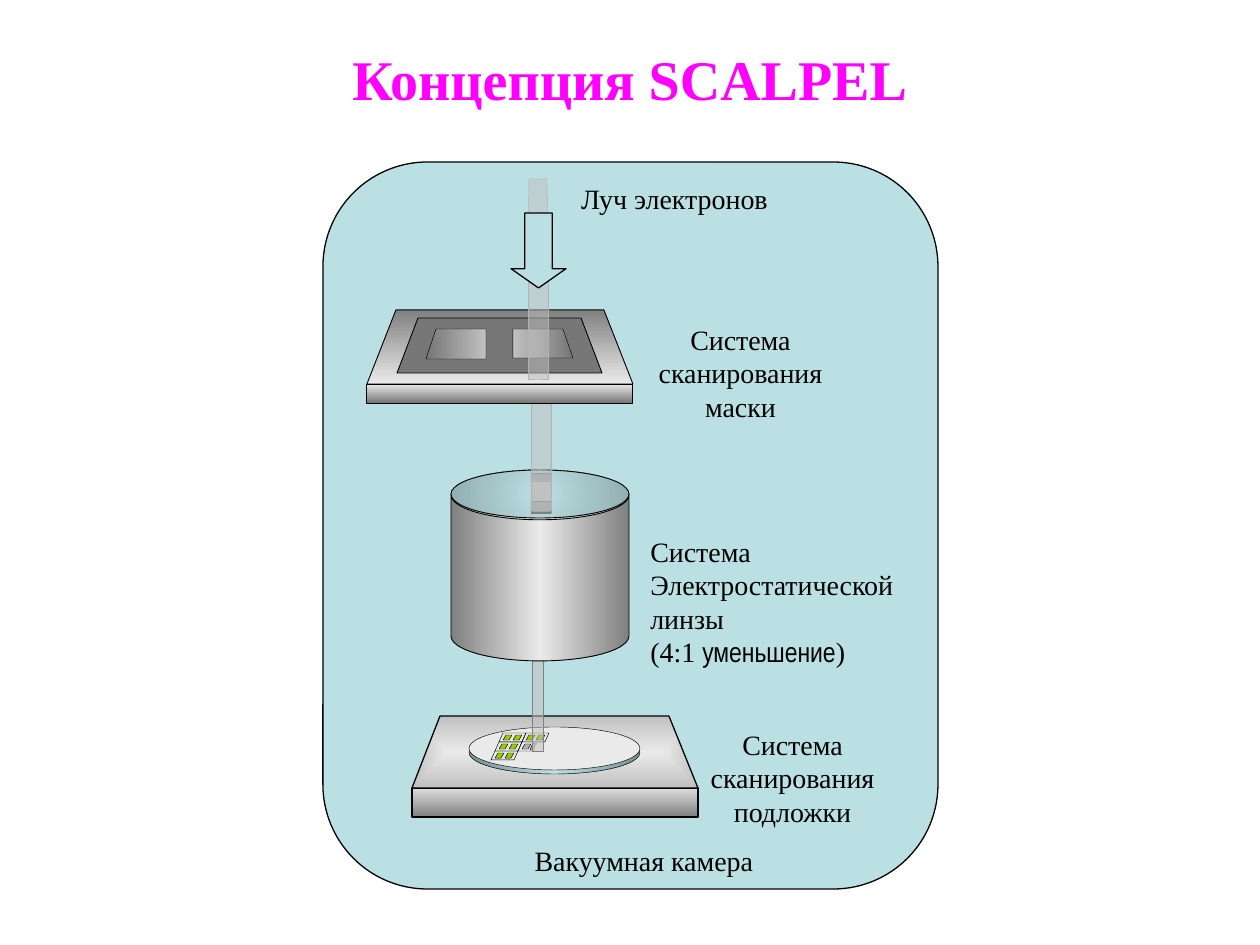
from lxml.etree import SubElement
from pptx import Presentation
from pptx.dml.color import RGBColor
from pptx.enum.shapes import MSO_CONNECTOR, MSO_SHAPE
from pptx.enum.text import MSO_AUTO_SIZE, PP_ALIGN
from pptx.oxml.ns import qn
from pptx.util import Emu, Pt

SCALE = 914400 / 126
SERIF = "Times New Roman"
NARROW = "Arial Narrow"
COLOURS = {
    "black": "000000",
    "title": "FF00FF",
    "chamber": "BBE0E3",
    "rim": "789092",
    "lens_edge": "91AEB1",
    "light": "EAEAEA",
    "pale": "DDDDDD",
    "silver": "C0C0C0",
    "chip_grey": "B3B3B3",
    "beam_edge": "B2B2B2",
    "grey": "808080",
    "mask": "777777",
    "chip": "99CC00",
}


def px(length):
    return Emu(round(length * SCALE))


class Painter:
    def __init__(self, page):
        self.page = page

    def style(self, shape, fill, line, width, alpha=None, angle=None):
        shape.shadow.inherit = False
        if fill is None:
            shape.fill.background()
        elif isinstance(fill, tuple):
            self.gradient(shape, fill, angle)
        else:
            shape.fill.solid()
            shape.fill.fore_color.rgb = RGBColor.from_string(COLOURS[fill])
            if alpha:
                colour = shape._element.spPr.find(qn("a:solidFill"))[0]
                SubElement(colour, qn("a:alpha"), val=str(alpha * 1000))
        if line is None:
            shape.line.fill.background()
        else:
            shape.line.color.rgb = RGBColor.from_string(COLOURS[line])
            shape.line.width = Pt(width)

    def gradient(self, shape, names, angle):
        shape.fill.gradient()
        gradient = shape._element.spPr.find(qn("a:gradFill"))
        for child in list(gradient):
            gradient.remove(child)
        stops = SubElement(gradient, qn("a:gsLst"))
        for index, name in enumerate(names):
            position = index * 100000 // (len(names) - 1)
            stop = SubElement(stops, qn("a:gs"), pos=str(position))
            SubElement(stop, qn("a:srgbClr"), val=COLOURS[name])
        if isinstance(angle, int):
            SubElement(gradient, qn("a:lin"), ang=str(angle * 60000), scaled="0")
        else:
            centre = SubElement(gradient, qn("a:path"), path=angle)
            sides = dict.fromkeys("ltrb", "50000")
            SubElement(centre, qn("a:fillToRect"), **sides)

    def preset(self, kind, box, fill, line="black", width=0.25,
               adjust=(), alpha=None, angle=None):
        shape = self.page.shapes.add_shape(kind, *map(px, box))
        for index, value in enumerate(adjust):
            shape.adjustments[index] = value
        self.style(shape, fill, line, width, alpha, angle)

    def outline(self, points, fill=None, line="black", width=0.25,
                alpha=None, angle=None, close=True):
        builder = self.page.shapes.build_freeform(*points[0], scale=SCALE)
        builder.add_line_segments(points[1:], close=close)
        self.style(builder.convert_to_shape(), fill, line, width, alpha, angle)

    def beam(self, box, fill="silver", line="beam_edge"):
        self.preset(MSO_SHAPE.RECTANGLE, box, fill, line, alpha=50)

    def rule(self, left, right, top):
        line = self.page.shapes.add_connector(
            MSO_CONNECTOR.STRAIGHT, px(left), px(top), px(right), px(top))
        line.line.color.rgb = RGBColor.from_string(COLOURS["grey"])
        line.line.width = Pt(0.5)
        SubElement(line._element.spPr, qn("a:effectLst"))

    def text(self, box, paragraphs, size=16, colour="black", bold=False,
             align=PP_ALIGN.CENTER, wrap=True, grow=True):
        frame = self.page.shapes.add_textbox(*map(px, box)).text_frame
        frame.word_wrap = wrap
        if grow:
            frame.auto_size = MSO_AUTO_SIZE.SHAPE_TO_FIT_TEXT
        for index, spans in enumerate(paragraphs):
            para = frame.add_paragraph() if index else frame.paragraphs[0]
            para.alignment = align
            for words, font in spans:
                span = para.add_run()
                span.text = words
                span.font.name = font
                span.font.size = Pt(size)
                span.font.bold = bold
                span.font.color.rgb = RGBColor.from_string(COLOURS[colour])

    def chip(self, left, top, fill):
        points = [(3, 2), (9, 2), (6, 7), (0, 7)]
        self.outline([(left + x, top + y) for x, y in points], fill)

    def die(self, left, top):
        for shift in (0, 10):
            self.chip(left + shift, top, "chip")
        points = [(0, 0), (23, 0), (19, 9), (-4, 9)]
        self.outline([(left + x, top + y) for x, y in points])


def draw_substrate(painter):
    painter.preset(MSO_SHAPE.RECTANGLE, (412, 788, 286, 29), ("pale", "grey"),
                   width=0.75, angle=90)
    painter.outline([(412, 788), (440, 716), (669, 716), (698, 788)],
                    ("light", "silver"), width=0.75, angle="rect")
    painter.preset(MSO_SHAPE.OVAL, (469, 731, 171, 43),
                   ("rim", "chamber", "rim"), angle=0)
    painter.preset(MSO_SHAPE.OVAL, (469, 727, 171, 43), "light")
    for row, count in enumerate((2, 2, 1)):
        columns = 1 if row else count
        for column in range(columns):
            painter.die(503 - 4 * row + 23 * column, 733 + 9 * row)
    painter.outline([(522, 742), (518, 751), (534, 751)], close=False)
    painter.chip(522, 742, "chip_grey")
    painter.outline([(537, 743), (533, 743), (530, 750), (534, 750)],
                    "chip_grey", close=False)
    painter.beam((532, 649, 11, 102), line="grey")


def draw_lens(painter):
    painter.preset(MSO_SHAPE.CAN, (451, 470, 178, 191),
                   ("grey", "light", "grey"), width=0.5, adjust=[0.28], angle=0)
    painter.preset(MSO_SHAPE.OVAL, (451, 470, 178, 48),
                   ("chamber", "lens_edge"), width=0.5, angle="circle")
    painter.beam((531, 473, 20, 37))
    for top in (473, 513):
        painter.rule(531, 551, top)
    painter.beam((531, 473, 20, 8), "grey", "grey")
    painter.beam((531, 501, 20, 11), "grey", "grey")
    painter.beam((531, 480, 20, 21), line=None)
    painter.beam((531, 402, 20, 108))


def draw_mask(painter):
    painter.outline([(396, 310), (367, 384), (633, 384), (604, 310)],
                    ("grey", "light"), width=0.5, angle=90)
    painter.preset(MSO_SHAPE.RECTANGLE, (367, 384, 266, 19), ("light", "mask"),
                   width=0.5, angle=90)
    painter.outline([(418, 318), (397, 373), (602, 373), (581, 318)],
                    "mask", width=0.5)
    painter.outline([(426, 359), (436, 329), (486, 329), (486, 359)],
                    ("mask", "silver"), angle=0)
    painter.outline([(573, 358), (563, 329), (513, 329), (513, 358)],
                    ("silver", "mask"), angle=0)


def draw_source(painter):
    painter.outline([(529, 179), (547, 179), (548, 237), (528, 237)],
                    "silver", "beam_edge", alpha=50)
    painter.beam((528, 237, 20, 142))
    painter.preset(MSO_SHAPE.DOWN_ARROW, (511, 213, 55, 75), "chamber",
                   width=0.75, adjust=[0.5, 0.35])


def draw_labels(painter):
    painter.text((561, 175, 227, 45), [[("Луч электронов", SERIF)]], wrap=False)
    painter.text((690, 721, 205, 113), [[("Система сканирования подложки", SERIF)]])
    painter.text((638, 528, 290, 149), [
        [("Система Электростатической линзы", SERIF)],
        [("(4:1 ", SERIF), ("уменьшение", NARROW), (")", SERIF)],
    ], align=PP_ALIGN.LEFT)
    painter.text((638, 316, 205, 113), [[("Система сканирования маски", SERIF)]])
    painter.text((511, 837, 266, 45), [[("Вакуумная камера", SERIF)]], wrap=False)


def main():
    deck = Presentation()
    deck.slide_width, deck.slide_height = px(1260), px(945)
    painter = Painter(deck.slides.add_slide(deck.slide_layouts[6]))
    painter.text((63, 38, 1134, 127), [[("Концепция SCALPEL", SERIF)]],
                 size=32, colour="title", bold=True, grow=False)
    painter.preset(MSO_SHAPE.ROUNDED_RECTANGLE, (323, 162, 615, 727), "chamber",
                   width=0.75, adjust=[0.17])
    draw_substrate(painter)
    draw_lens(painter)
    draw_mask(painter)
    draw_source(painter)
    draw_labels(painter)
    deck.save("out.pptx")


if __name__ == "__main__":
    main()
